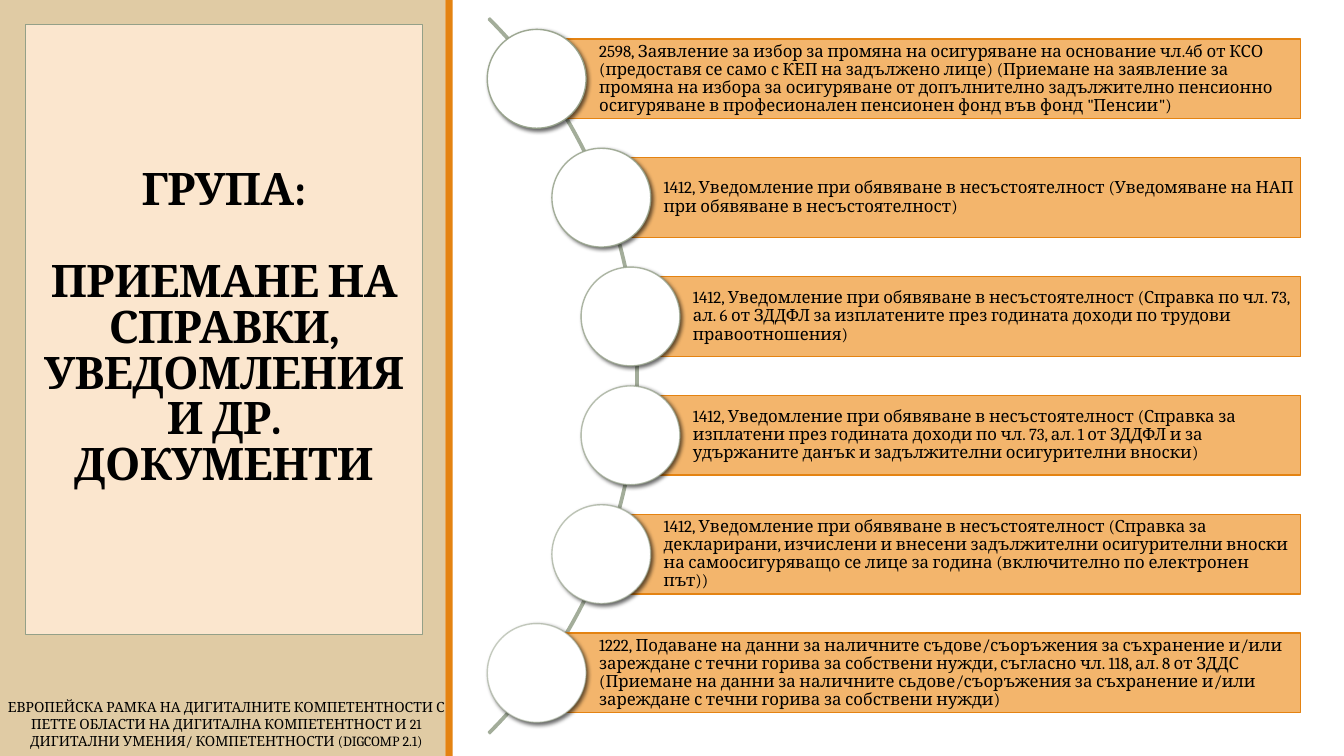
import math
from dataclasses import dataclass

import lxml.etree
import pptx
import pptx.dml.color
import pptx.enum.shapes
import pptx.enum.text
import pptx.oxml.ns
import pptx.util

COLUMNS, ROWS = 160, 90
CELL = pptx.util.Inches(13.33) / COLUMNS
SHAPES = pptx.enum.shapes.MSO_SHAPE
ALIGN = pptx.enum.text.PP_ALIGN
COLORS = {
    "panel": "E0CBA4", "stripe": "E48312", "card": "FBE6CE", "bar": "F3B56C",
    "sage": "94A088", "arc": "A3AD9A", "white": "FFFFFF", "black": "000000",
}
TITLE = ["ГРУПА:", "ПРИЕМАНЕ НА СПРАВКИ, УВЕДОМЛЕНИЯ И ДР. ДОКУМЕНТИ"]
FOOTER = ("ЕВРОПЕЙСКА РАМКА НА ДИГИТАЛНИТЕ КОМПЕТЕНТНОСТИ С ПЕТТЕ ОБЛАСТИ НА "
          "ДИГИТАЛНА КОМПЕТЕНТНОСТ И 21 ДИГИТАЛНИ УМЕНИЯ/ КОМПЕТЕНТНОСТИ (DIGCOMP 2.1)")
INSOLVENCY = "1412, Уведомление при обявяване в несъстоятелност "
SERVICES = [
    "2598, Заявление за избор за промяна на осигуряване на основание чл.4б от КСО "
    "(предоставя се само с КЕП на задължено лице) (Приемане на заявление за промяна на "
    "избора за осигуряване от допълнително задължително пенсионно осигуряване в "
    "професионален пенсионен фонд във фонд \"Пенсии\")",
    INSOLVENCY + "(Уведомяване на НАП при обявяване в несъстоятелност)",
    INSOLVENCY + "(Справка по чл. 73, ал. 6 от ЗДДФЛ за изплатените през годината доходи "
    "по трудови правоотношения)",
    INSOLVENCY + "(Справка за изплатени през годината доходи по чл. 73, ал. 1 от ЗДДФЛ и "
    "за удържаните данък и задължителни осигурителни вноски)",
    INSOLVENCY + "(Справка за декларирани, изчислени и внесени задължителни осигурителни "
    "вноски на самоосигуряващо се лице за година (включително по електронен път))",
    "1222, Подаване на данни за наличните съдове/съоръжения за съхранение и/или зареждане "
    "с течни горива за собствени нужди, съгласно чл. 118, ал. 8 от ЗДДС (Приемане на данни "
    "за наличните сьдове/съоръжения за съхранение и/или зареждане с течни горива за "
    "собствени нужди)",
]


@dataclass
class Box:
    """Area in grid cells."""
    left: float
    top: float
    width: float
    height: float

    def inner(self, left, top, width, height):
        return Box(self.left + left, self.top + top, width, height)

    def lengths(self):
        return [round(value * CELL)
                for value in (self.left, self.top, self.width, self.height)]


def color(name):
    return pptx.dml.color.RGBColor.from_string(COLORS[name])


def add_child(parent, tag, **attributes):
    child = lxml.etree.SubElement(parent, pptx.oxml.ns.qn(tag))
    for name, value in attributes.items():
        child.set(name, str(value))
    return child


def add_form(slide, kind, box, fill=None, line=None, weight=1):
    shape = slide.shapes.add_shape(kind, *box.lengths())
    shape.shadow.inherit = False
    if fill:
        shape.fill.solid()
        shape.fill.fore_color.rgb = color(fill)
    else:
        shape.fill.background()
    if line:
        shape.line.color.rgb = color(line)
        shape.line.width = pptx.util.Pt(weight)
    else:
        shape.line.fill.background()
    return shape


def write(shape, paragraphs, size, align=ALIGN.LEFT, bold=False, spacing=1.0,
          gap=0, tracking=0, insets=(1.2, 0.6, 1.2, 0.6)):
    """Insets are left, top, right, bottom in cells; gap and tracking in points."""
    frame = shape.text_frame
    frame.word_wrap = True
    frame.vertical_anchor = pptx.enum.text.MSO_ANCHOR.MIDDLE
    (frame.margin_left, frame.margin_top,
     frame.margin_right, frame.margin_bottom) = [round(inset * CELL) for inset in insets]
    for index, text in enumerate(paragraphs):
        para = frame.add_paragraph() if index else frame.paragraphs[0]
        para.alignment = align
        para.line_spacing = spacing
        para.space_before = pptx.util.Pt(gap if index else 0)
        span = para.add_run()
        span.text = text
        span.font.name = "Cambria"
        span.font.size = pptx.util.Pt(size)
        span.font.bold = bold
        span.font.color.rgb = color("black")
        if tracking:
            span.font._element.set("spc", str(round(tracking * 100)))


def add_sidebar(slide, box):
    stripe = 0.84
    add_form(slide, SHAPES.RECTANGLE, box.inner(0, 0, box.width - stripe, box.height), "panel")
    add_form(slide, SHAPES.RECTANGLE,
             box.inner(box.width - stripe, 0, stripe, box.height), "stripe")
    card = add_form(slide, SHAPES.RECTANGLE, box.inner(3, 2.9, 47.3, 72.7), "card", "sage")
    write(card, TITLE, 32, align=ALIGN.CENTER, bold=True, spacing=0.85, gap=33, tracking=-0.5)
    footer = slide.shapes.add_textbox(*box.inner(0, 82.8, box.width, 6.84).lengths())
    write(footer, [FOOTER], 10, align=ALIGN.CENTER, insets=[0.48] * 4)


def add_marker(slide, box, opacity):
    """White circle with a soft shadow and a partly transparent outline."""
    marker = add_form(slide, SHAPES.OVAL, box, "white", "sage")
    properties = marker._element.spPr
    outline = properties.find(".//" + pptx.oxml.ns.qn("a:ln") + "//" + pptx.oxml.ns.qn("a:srgbClr"))
    add_child(outline, "a:alpha", val=opacity * 1000)
    effects = properties.find(pptx.oxml.ns.qn("a:effectLst"))
    shadow = add_child(effects, "a:outerShdw", blurRad=pptx.util.Pt(3),
                       dist=pptx.util.Pt(2), dir=45 * 60000, rotWithShape=0)
    tint = add_child(shadow, "a:srgbClr", val=COLORS["black"])
    add_child(tint, "a:alpha", val=60000)


def add_curved_list(slide, box, items):
    """Bars whose left ends and markers follow an arc centred left of the box."""
    center_x, center_y, radius = -38.16, 44.76, 60.24
    track, step, right = radius - 0.48, 14.15, 100.97
    bar_height, diameter = 9.48, 11.76
    arc = add_form(slide, SHAPES.BLOCK_ARC,
                   box.inner(center_x - radius, center_y - radius, 2 * radius, 2 * radius),
                   line="arc", weight=1.25)
    for index, value in enumerate((189, 27, 0.002)):
        arc.adjustments[index] = value
    for index, item in enumerate(items):
        rise = (index - (len(items) - 1) / 2) * step
        x = center_x + math.sqrt(track ** 2 - rise ** 2)
        y = center_y + rise
        bar = add_form(slide, SHAPES.RECTANGLE,
                       box.inner(x, y - bar_height / 2, right - x, bar_height), "bar", "stripe")
        write(bar, [item], 12, spacing=0.9, insets=(7.44, 0.36, 0.36, 0.36))
        add_marker(slide, box.inner(x - diameter / 2, y - diameter / 2, diameter, diameter),
                   opacity=90 - 8 * index)


def main():
    deck = pptx.Presentation()
    deck.slide_width = round(COLUMNS * CELL)
    deck.slide_height = pptx.util.Inches(7.5)
    slide = deck.slides.add_slide(deck.slide_layouts[6])
    sidebar_width = 53.88
    add_sidebar(slide, Box(0, 0, sidebar_width, ROWS))
    add_curved_list(slide, Box(sidebar_width, 0, COLUMNS - sidebar_width, ROWS), SERVICES)
    deck.save("out.pptx")


if __name__ == "__main__":
    main()
